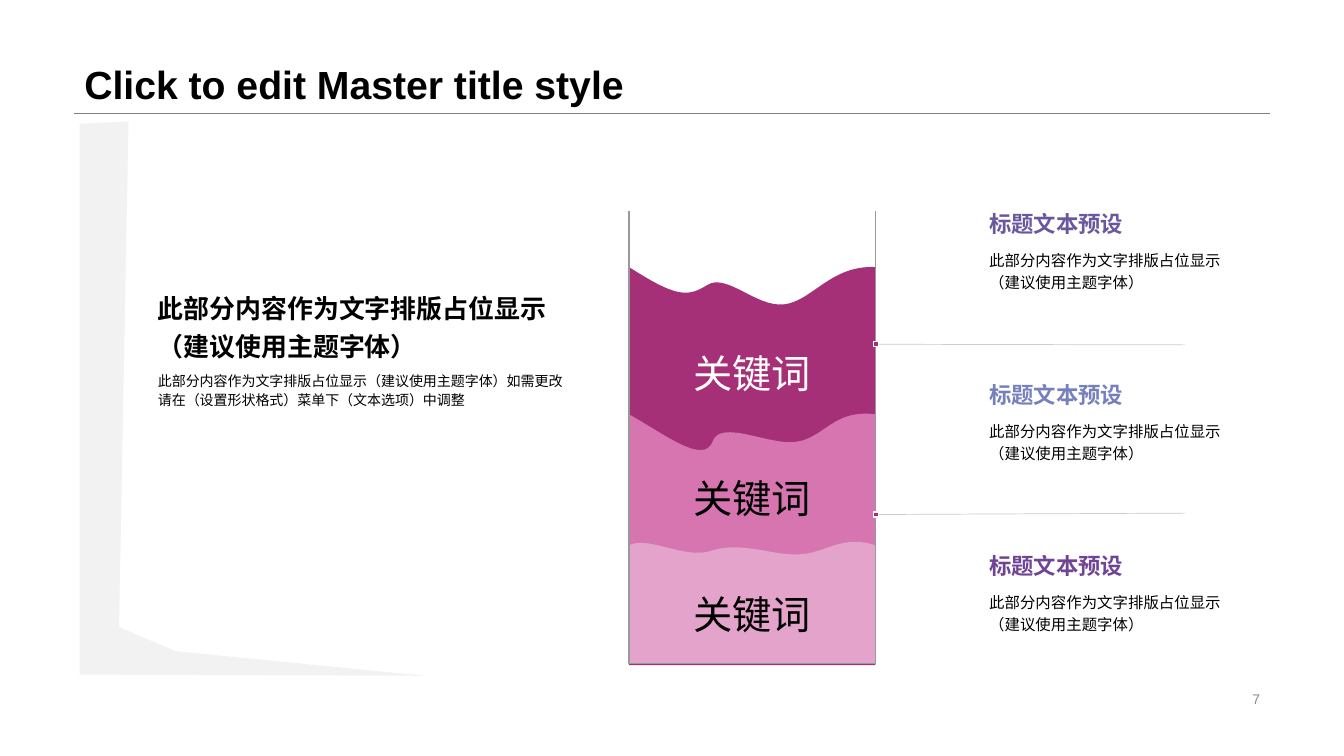
"""Build a slide with a wavy three-layer container and three captions."""
from copy import deepcopy

from lxml.etree import SubElement
from pptx import Presentation
from pptx.dml.color import RGBColor
from pptx.enum.shapes import MSO_CONNECTOR, MSO_SHAPE
from pptx.enum.text import MSO_ANCHOR, MSO_AUTO_SIZE, PP_ALIGN
from pptx.oxml.ns import qn
from pptx.util import Cm, Pt

TITLE = "Click to edit Master title style"
PAGE_NUMBER = "7"
PLACEHOLDER = "此部分内容作为文字排版占位显示\n（建议使用主题字体）"
CAPTION = "此部分内容作为文字排版占位显示（建议使用主题字体）如需更改请在（设置形状格式）菜单下（文本选项）中调整"
KEYWORD = "关键词"
ITEM_HEADING = "标题文本预设"
ITEM_COLORS = ["6B57A0", "7580BC", "704495"]
MAGENTA = "A53078"

GLASS_LEFT, GLASS_RIGHT, GLASS_TOP, GLASS_BOTTOM = 15.85, 22.06, 5.33, 16.72
LAYERS = [
    {"fill": MAGENTA, "text": "FFFFFF", "text_top": 8.57, "bottom": 16.76,
     "wave": [(15.85, 6.73), (16.97, 7.44), (17.3, 7.52), (17.81, 7.19),
              (18.31, 6.86), (19.05, 7.75), (19.76, 7.67),
              (20.47, 7.59), (20.93, 6.68), (22.06, 6.73)]},
    {"fill": "D775B1", "text": "000000", "text_top": 11.73, "bottom": GLASS_BOTTOM,
     "wave": [(15.85, 10.44), (16.79, 10.97), (17.73, 11.71), (17.96, 11.13),
              (18.16, 10.54), (19.41, 11.25), (20.09, 11.13),
              (20.78, 11.02), (21.01, 10.31), (22.06, 10.44)]},
    {"fill": "E4A3CB", "text": "000000", "text_top": 14.66, "bottom": GLASS_BOTTOM,
     "wave": [(15.85, 13.74), (16.38, 13.49), (17.25, 14.12), (17.96, 13.87),
              (18.69, 13.64), (19.46, 14), (20.14, 13.97),
              (20.83, 13.94), (21.21, 13.46), (22.06, 13.74)]},
]
PANEL = [(2.01, 3.12), (3.24, 3.06), (3, 15.8), (4.42, 16.41), (10.72, 17.03), (2.01, 17)]
DIVIDERS = [(8.61, 8.69), (12.9, 12.93)]
MARKER_LEFT, MARKER_SIZE, DIVIDER_RIGHT = 22.01, 0.13, 29.87
ITEM_LEFT, ITEM_TOP, ITEM_STEP, ITEM_WIDTH = 24.68, 5.21, 4.31, 7.16
HEADING_HEIGHT, BODY_HEIGHT = 0.89, 2.01


def color(value):
    return RGBColor.from_string(value)


def write(frame, text, size=11, fill="000000", bold=False, align=PP_ALIGN.LEFT,
          anchor=MSO_ANCHOR.TOP, spacing=1.0, wrap=True):
    frame.word_wrap = wrap
    frame.auto_size = MSO_AUTO_SIZE.NONE
    frame.vertical_anchor = anchor
    paragraph = frame.paragraphs[0]
    paragraph.text = text
    paragraph.alignment = align
    paragraph.line_spacing = spacing
    for run in paragraph.runs:
        run.font.name = "Arial"
        run.font.size = Pt(size)
        run.font.bold = bold
        run.font.color.rgb = color(fill)
    for line_break in paragraph._p.findall(qn("a:br")):
        line_break.append(deepcopy(paragraph.runs[0]._r.rPr))


def add_text(slide, box, text, **style):
    shape = slide.shapes.add_textbox(*map(Cm, box))
    write(shape.text_frame, text, **style)


def add_outline(slide, points, fill=None, line=None):
    corners = [(Cm(x), Cm(y)) for x, y in points]
    builder = slide.shapes.build_freeform(*corners[0])
    builder.add_line_segments(corners[1:], close=fill is not None)
    shape = builder.convert_to_shape()
    shape.shadow.inherit = False
    if fill:
        shape.fill.solid()
        shape.fill.fore_color.rgb = color(fill)
    else:
        shape.fill.background()
    if line:
        shape.line.color.rgb = color(line)
        shape.line.width = Pt(1)
    else:
        shape.line.fill.background()
    return shape


def add_layer(slide, wave, bottom, fill):
    base = [(GLASS_RIGHT, bottom), (GLASS_LEFT, bottom)]
    shape = add_outline(slide, wave + base, fill=fill)
    segments = list(shape._element.iter(qn("a:lnTo")))[:len(wave) - 1]
    for first in range(0, len(segments), 3):
        curve, *others = segments[first:first + 3]
        curve.tag = qn("a:cubicBezTo")
        for segment in others:
            curve.append(segment[0])
            segment.getparent().remove(segment)


def add_rule(slide, start, end, line, width):
    rule = slide.shapes.add_connector(MSO_CONNECTOR.STRAIGHT, *map(Cm, start + end))
    rule.line.color.rgb = color(line)
    rule.line.width = Pt(width)
    SubElement(rule._element.spPr, qn("a:effectLst"))
    return rule


def add_divider(slide, marker_top, end_y):
    marker = slide.shapes.add_shape(MSO_SHAPE.RECTANGLE, Cm(MARKER_LEFT), Cm(marker_top),
                                    Cm(MARKER_SIZE), Cm(MARKER_SIZE))
    marker.shadow.inherit = False
    marker.fill.solid()
    marker.fill.fore_color.rgb = color(MAGENTA)
    marker.line.color.rgb = color("FFFFFF")
    marker.line.width = Pt(1)
    start = (MARKER_LEFT + MARKER_SIZE, marker_top + MARKER_SIZE / 2)
    rule = add_rule(slide, start, (DIVIDER_RIGHT, end_y), "CCCCCC", 0.5)
    rule.begin_connect(marker, 3)


def main():
    presentation = Presentation()
    presentation.slide_width, presentation.slide_height = Cm(33.87), Cm(19.05)
    slide = presentation.slides.add_slide(presentation.slide_layouts[5])

    title = slide.shapes.title
    title.left, title.top, title.width, title.height = map(Cm, (1.87, 0, 30.15, 2.84))
    write(title.text_frame, TITLE, size=28, bold=True, anchor=MSO_ANCHOR.BOTTOM, spacing=0.9)
    add_rule(slide, (1.87, 2.84), (32, 2.84), "808080", 0.25)
    add_text(slide, (23.93, 17.32, 8.08, 0.58), PAGE_NUMBER, size=10, fill="8C8C8C",
             align=PP_ALIGN.RIGHT, anchor=MSO_ANCHOR.MIDDLE)

    for layer in LAYERS:
        add_layer(slide, layer["wave"], layer["bottom"], layer["fill"])
    add_outline(slide, [(GLASS_RIGHT, GLASS_TOP), (GLASS_RIGHT, GLASS_BOTTOM),
                        (GLASS_LEFT, GLASS_BOTTOM), (GLASS_LEFT, GLASS_TOP)], line="999999")
    for layer in LAYERS:
        add_text(slide, (16.86, layer["text_top"], 4.19, 1.63), KEYWORD, size=28, wrap=False,
                 fill=layer["text"], align=PP_ALIGN.CENTER, anchor=MSO_ANCHOR.MIDDLE)

    for index, heading_color in enumerate(ITEM_COLORS):
        top = ITEM_TOP + index * ITEM_STEP
        add_text(slide, (ITEM_LEFT, top, ITEM_WIDTH, HEADING_HEIGHT), ITEM_HEADING, size=16,
                 fill=heading_color, bold=True, anchor=MSO_ANCHOR.BOTTOM)
        add_text(slide, (ITEM_LEFT, top + HEADING_HEIGHT, ITEM_WIDTH, BODY_HEIGHT),
                 PLACEHOLDER, spacing=1.2)
    for marker_top, end_y in DIVIDERS:
        add_divider(slide, marker_top, end_y)

    add_outline(slide, PANEL, fill="F2F2F2")
    add_text(slide, (3.73, 7.11, 10.82, 2.11), PLACEHOLDER, size=18.5, bold=True,
             anchor=MSO_ANCHOR.MIDDLE, spacing=1.2)
    add_text(slide, (3.73, 9.22, 10.82, 1.19), CAPTION, size=10,
             anchor=MSO_ANCHOR.MIDDLE, spacing=1.1)
    presentation.save("out.pptx")


if __name__ == "__main__":
    main()
